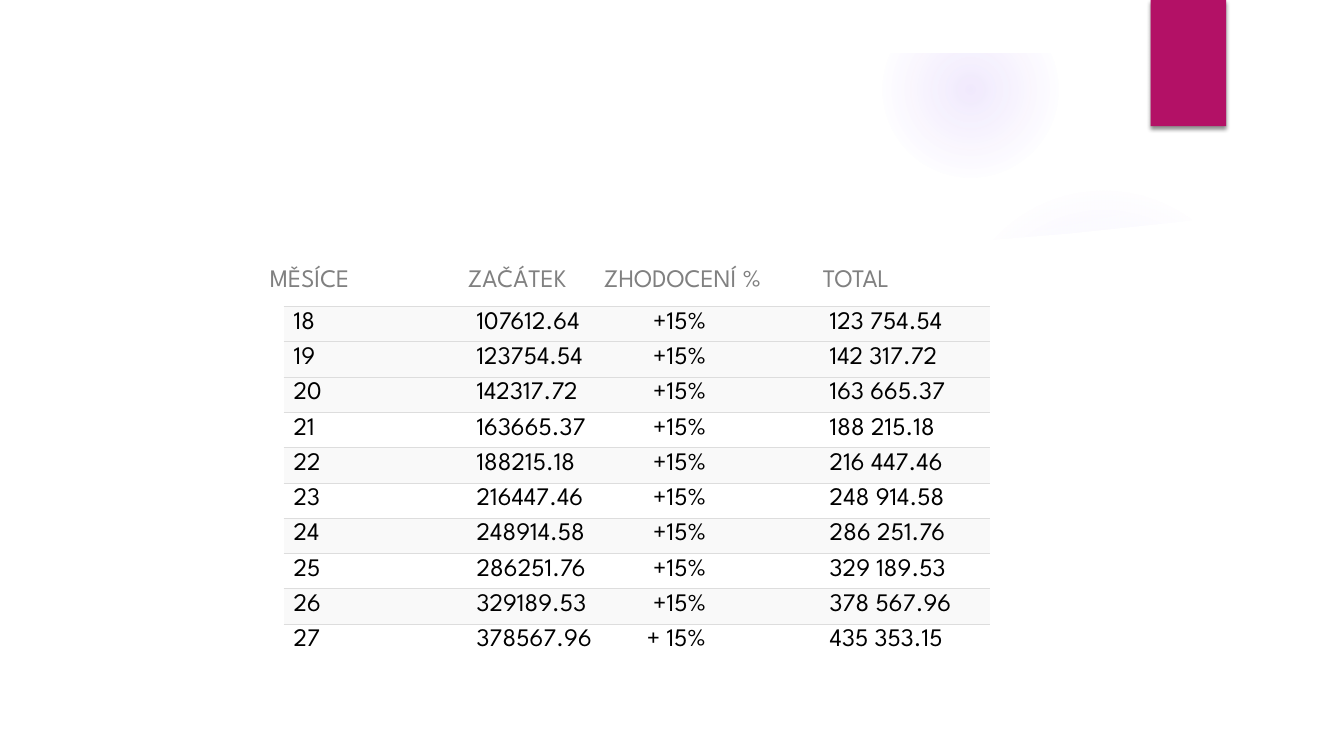
"""Build a slide with a table of monthly balances growing by 15 %."""
import copy
import dataclasses
import itertools

import pptx
import pptx.dml.color
import pptx.enum.shapes
import pptx.enum.text
import pptx.oxml
import pptx.oxml.ns
import pptx.util

Cm = pptx.util.Cm
Shape = pptx.enum.shapes.MSO_SHAPE
NAMESPACE = pptx.oxml.ns.nsdecls("a")
WIDTH, HEIGHT = 33.87, 19.05
TEXT_FORMAT = {"name": "League Spartan", "size": pptx.util.Pt(18), "bold": False}
HEADINGS = ("MĚSÍCE", "ZAČÁTEK", "ZHODOCENÍ %", "TOTAL")
HEADING_STOPS = (4.99, 8.42, 13.94)
FIRST_MONTH = 18
BALANCES = (
    "107 612.64", "123 754.54", "142 317.72", "163 665.37", "188 215.18", "216 447.46",
    "248 914.58", "286 251.76", "329 189.53", "378 567.96", "435 353.15",
)
COLUMN_WIDTH, ROW_HEIGHT = 4.45, 0.84


@dataclasses.dataclass(frozen=True)
class Glow:
    left: float
    top: float
    diameter: float
    stops: tuple[tuple[int, int], ...]


@dataclasses.dataclass(frozen=True)
class Outline:
    points: tuple[tuple[float, float], ...]
    opacity: int


GLOWS = (
    Glow(23.9, 4.65, 7.82, ((0, 7), (36, 6), (69, 0))),
    Glow(22.23, 0.03, 4.45, ((0, 14), (36, 7), (73, 0))),
)
OUTLINES = (
    Outline(((23.72, 6.35), (27.94, 5.99), (32.74, 5.44), (32.59, 4.22), (30.53, 4.85),
             (28.47, 5.36), (26.47, 5.77), (23.62, 6.17)), 20),
    Outline(((1.27, 5.18), (1.27, 17.78), (32.6, 17.78), (32.6, 5.18), (29.77, 5.59),
             (26.92, 5.89), (24.1, 6.12), (21.34, 6.25), (17.32, 6.3), (12.98, 6.2),
             (8.15, 5.92), (4.04, 5.54)), 100),
)


def color(code: str) -> pptx.dml.color.RGBColor:
    return pptx.dml.color.RGBColor.from_string(code)


def element(markup: str):
    tag = markup.split()[0].strip("<>")
    return pptx.oxml.parse_xml(markup.replace(f"<{tag}", f"<{tag} {NAMESPACE}", 1))


def paint(shape, code: str) -> None:
    shape.shadow.inherit = False
    shape.line.fill.background()
    shape.fill.solid()
    shape.fill.fore_color.rgb = color(code)


def write_text(para, text: str, code: str) -> None:
    span = para.add_run()
    span.text = text
    for name, value in TEXT_FORMAT.items():
        setattr(span.font, name, value)
    span.font.color.rgb = color(code)
    ending = element("<a:endParaRPr />")
    ending.attrib.update(span.font._rPr.attrib)
    ending.extend(copy.deepcopy(child) for child in span.font._rPr)
    para._p.append(ending)


def add_glow(page, glow: Glow) -> None:
    shape = page.shapes.add_shape(
        Shape.OVAL, Cm(glow.left), Cm(glow.top), Cm(glow.diameter), Cm(glow.diameter))
    paint(shape, "9B6BF2")
    stops = "".join(
        f'<a:gs pos="{place * 1000}"><a:srgbClr val="9B6BF2">'
        f'<a:alpha val="{opacity * 1000}"/></a:srgbClr></a:gs>'
        for place, opacity in glow.stops)
    gradient = element(
        f'<a:gradFill ><a:gsLst>{stops}</a:gsLst><a:path path="circle">'
        '<a:fillToRect l="50000" t="50000" r="50000" b="50000"/></a:path></a:gradFill>')
    properties = shape.element.spPr
    properties.replace(properties.find(pptx.oxml.ns.qn("a:solidFill")), gradient)


def add_outline(page, outline: Outline) -> None:
    points = [(Cm(x), Cm(y)) for x, y in outline.points]
    builder = page.shapes.build_freeform(*points[0])
    builder.add_line_segments(points[1:])
    shape = builder.convert_to_shape()
    paint(shape, "FFFFFF")
    if outline.opacity < 100:
        fill = shape.element.spPr.find(pptx.oxml.ns.qn("a:solidFill"))
        fill[0].append(element(f'<a:alpha val="{outline.opacity * 1000}"/>'))


def add_frame(page) -> None:
    frame = page.shapes.add_shape(Shape.FRAME, 0, 0, Cm(WIDTH), Cm(HEIGHT))
    frame.adjustments[0] = 0.07
    paint(frame, "FFFFFF")


def add_accent(page) -> None:
    accent = page.shapes.add_shape(Shape.RECTANGLE, Cm(29), 0, Cm(1.9), Cm(3.18))
    paint(accent, "B31166")
    effects = accent.element.spPr.find(pptx.oxml.ns.qn("a:effectLst"))
    effects.append(element(
        '<a:outerShdw blurRad="38100" dist="25400" dir="5400000" rotWithShape="0">'
        '<a:srgbClr val="000000"><a:alpha val="45000"/></a:srgbClr></a:outerShdw>'))


def add_headings(page) -> None:
    box = page.shapes.add_textbox(Cm(6.22), Cm(6.27), Cm(20.9), Cm(1.45))
    frame = box.text_frame
    settings = {"word_wrap": True, "margin_left": Cm(0.58),
                "vertical_anchor": pptx.enum.text.MSO_ANCHOR.MIDDLE}
    for name, value in settings.items():
        setattr(frame, name, value)
    para = frame.paragraphs[0]
    stops = "".join(f'<a:tab pos="{Cm(stop)}" algn="l"/>' for stop in HEADING_STOPS)
    para._p.get_or_add_pPr().append(element(f"<a:tabLst >{stops}</a:tabLst>"))
    write_text(para, "\t".join(HEADINGS), "808080")


def add_borders(cell, last: bool) -> None:
    line = '<a:solidFill><a:srgbClr val="DDDDDD"/></a:solidFill>'
    empty = "<a:noFill/>"
    sides = {"lnL": empty, "lnR": empty, "lnT": line, "lnB": empty if last else line}
    properties = cell._tc.get_or_add_tcPr()
    for place, (side, fill) in enumerate(sides.items()):
        properties.insert(place, element(f'<a:{side} w="9525">{fill}</a:{side}>'))


def add_balances(page) -> None:
    count = len(BALANCES) - 1
    graphic = page.shapes.add_table(
        count, len(HEADINGS), Cm(7.15), Cm(7.72),
        Cm(COLUMN_WIDTH * len(HEADINGS)), Cm(ROW_HEIGHT * count))
    table = graphic.table
    table.first_row = table.horz_banding = False
    for column in table.columns:
        column.width = Cm(COLUMN_WIDTH)
    for index, (start, total) in enumerate(itertools.pairwise(BALANCES)):
        last = index == count - 1
        table.rows[index].height = Cm(ROW_HEIGHT)
        growth = "+ 15%" if last else "+15%"
        texts = (str(FIRST_MONTH + index), start.replace(" ", ""), growth, total)
        for place, text in enumerate(texts):
            cell = table.cell(index, place)
            flush = place == 0 or text == "+ 15%"
            cell.margin_left = Cm(0.25 if flush else 0.41)
            cell.margin_bottom = 0
            cell.fill.solid()
            shaded = index < 3 or index % 2 == 0
            cell.fill.fore_color.rgb = color("F9F9F9" if shaded else "FFFFFF")
            write_text(cell.text_frame.paragraphs[0], text, "000000")
            add_borders(cell, last)


def main() -> None:
    deck = pptx.Presentation()
    deck.slide_width, deck.slide_height = Cm(WIDTH), Cm(HEIGHT)
    page = deck.slides.add_slide(deck.slide_layouts[6])
    for glow in GLOWS:
        add_glow(page, glow)
    for outline in OUTLINES:
        add_outline(page, outline)
    add_frame(page)
    add_accent(page)
    add_headings(page)
    add_balances(page)
    deck.save("out.pptx")


if __name__ == "__main__":
    main()
